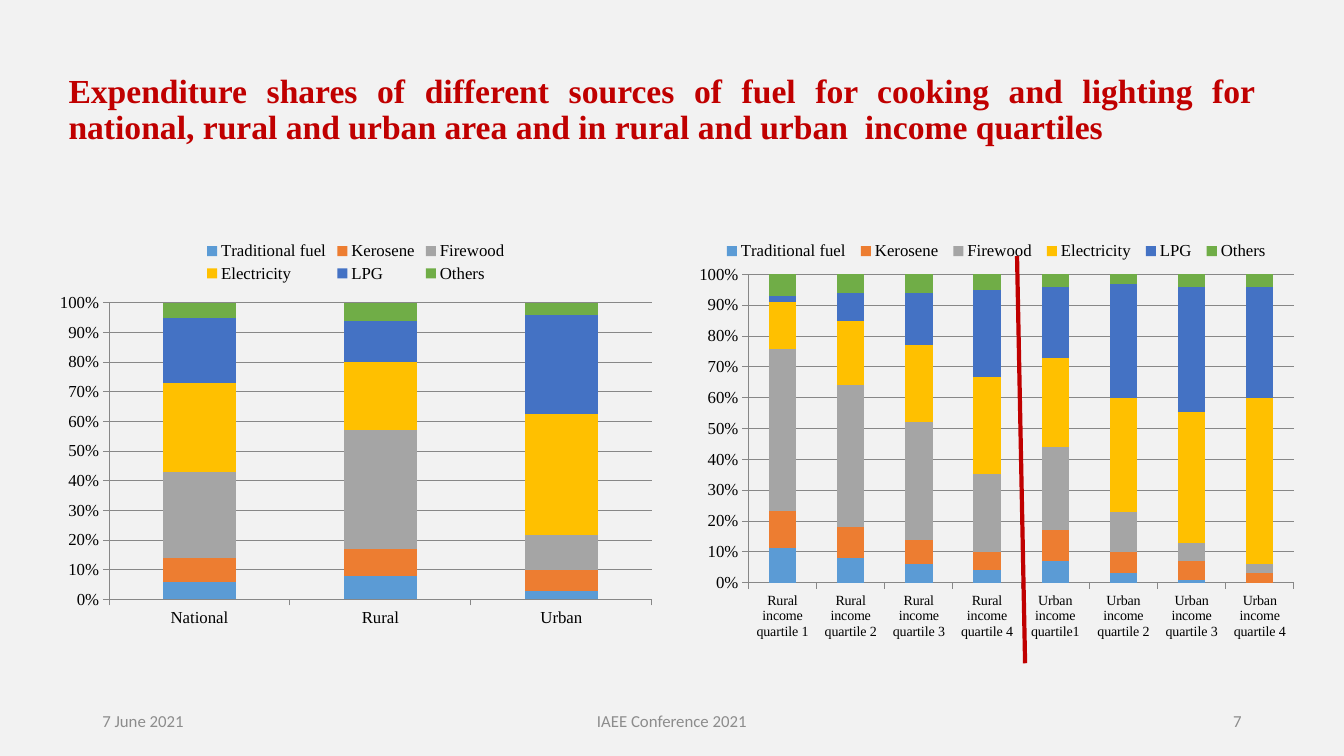
import pptx
import pptx.chart.data
import pptx.dml.color
import pptx.enum.chart
import pptx.enum.shapes
import pptx.enum.text
import pptx.oxml
import pptx.oxml.ns
import pptx.util
from lxml import etree

Pt = pptx.util.Pt
RGB = pptx.dml.color.RGBColor.from_string
Align = pptx.enum.text.PP_ALIGN
Middle = pptx.enum.text.MSO_ANCHOR.MIDDLE
qn = pptx.oxml.ns.qn

COLORS = {
    "background": "F2F2F2", "accent": "C00000", "footer": "8C8C8C",
    "text": "000000", "axis": "878787",
    "Traditional fuel": "5B9BD5", "Kerosene": "ED7D31", "Firewood": "A5A5A5",
    "Electricity": "FFC000", "LPG": "4472C4", "Others": "70AD47",
}
SERIF = "Times New Roman"


def set_font(font, color, **values):
    for name, value in values.items():
        setattr(font, name, value)
    font.color.rgb = RGB(COLORS[color])


def add_layout(parent, index, fractions, inner=False):
    for old in parent.findall(qn("c:layout")):
        parent.remove(old)
    layout = etree.Element(qn("c:layout"))
    manual = etree.SubElement(layout, qn("c:manualLayout"))
    entries = [("layoutTarget", "inner")] if inner else []
    entries += [("xMode", "edge"), ("yMode", "edge")]
    entries += zip("xywh", fractions)
    for tag, value in entries:
        etree.SubElement(manual, qn("c:" + tag)).set("val", str(value))
    parent.insert(index, layout)


deck = pptx.Presentation()
deck.slide_width, deck.slide_height = Pt(960), Pt(540)
page = deck.slides.add_slide(deck.slide_layouts[5])
page.background.fill.solid()
page.background.fill.fore_color.rgb = RGB(COLORS["background"])

title = page.shapes.title
title.left, title.top, title.width, title.height = Pt(41.76), Pt(26.64), Pt(861.84), Pt(104.4)
title.text_frame.text = (
    "Expenditure shares of different sources of fuel for cooking and lighting for "
    "national, rural and urban area and in rural and urban  income quartiles"
)
title.text_frame.vertical_anchor = Middle
title.text_frame.word_wrap = True
title.text_frame.auto_size = pptx.enum.text.MSO_AUTO_SIZE.NONE
para = title.text_frame.paragraphs[0]
para.alignment, para.line_spacing = Align.JUSTIFY, 0.9
set_font(para.runs[0].font, "accent", name=SERIF, size=Pt(24), bold=True)

charts = [
    {
        "place": (33.84, 164.16, 440.64, 290.16),
        "categories": ["National", "Rural", "Urban"],
        "category_size": 12,
        "plot": (0.1, 0.18, 0.88, 0.73),
        "legend": (0.25, 0.02, 0.5, 0.12),
        "shares": {
            "Traditional fuel": (6, 8, 3),
            "Kerosene": (8, 9, 7),
            "Firewood": (29, 40, 12),
            "Electricity": (30, 23, 41),
            "LPG": (22, 14, 34),
            "Others": (5, 6, 4),
        },
    },
    {
        "place": (490.32, 159.84, 442.8, 301.68),
        "categories": [
            "Rural income quartile 1", "Rural income quartile 2",
            "Rural income quartile 3", "Rural income quartile 4",
            "Urban income quartile1", "Urban income quartile 2",
            "Urban income quartile 3", "Urban income quartile 4",
        ],
        "category_size": 10,
        "plot": (0.1, 0.12, 0.88, 0.73),
        "legend": (0.05, 0.03, 0.9, 0.07),
        "shares": {
            "Traditional fuel": (11, 8, 6, 4, 7, 3, 1, 0),
            "Kerosene": (12, 10, 8, 6, 10, 7, 6, 3),
            "Firewood": (52, 46, 38, 25, 27, 13, 6, 3),
            "Electricity": (15, 21, 25, 31, 29, 37, 43, 54),
            "LPG": (2, 9, 17, 28, 23, 37, 41, 36),
            "Others": (7, 6, 6, 5, 4, 3, 4, 4),
        },
    },
]
for details in charts:
    data = pptx.chart.data.CategoryChartData()
    data.categories = details["categories"]
    for fuel, shares in details["shares"].items():
        data.add_series(fuel, shares)
    chart = page.shapes.add_chart(
        pptx.enum.chart.XL_CHART_TYPE.COLUMN_STACKED_100,
        *map(Pt, details["place"]), data,
    ).chart
    chart.has_title = False
    set_font(chart.font, "text", name=SERIF, size=Pt(12))

    plot = chart.plots[0]
    plot.gap_width, plot.overlap, plot.vary_by_categories = 150, 100, False
    for series in plot.series:
        series.format.fill.solid()
        series.format.fill.fore_color.rgb = RGB(COLORS[series.name])

    chart.has_legend = True
    chart.legend.position = pptx.enum.chart.XL_LEGEND_POSITION.TOP
    chart.legend.include_in_layout = False
    set_font(chart.legend.font, "text", name=SERIF, size=Pt(12))

    values = chart.value_axis
    values.minimum_scale, values.maximum_scale, values.major_unit = 0, 1, 0.1
    values.has_major_gridlines = True
    values.tick_labels.number_format = "0%"
    values.tick_labels.number_format_is_linked = False
    for axis, size in ((chart.category_axis, details["category_size"]), (values, 12)):
        axis.major_tick_mark = pptx.enum.chart.XL_TICK_MARK.OUTSIDE
        axis.minor_tick_mark = pptx.enum.chart.XL_TICK_MARK.NONE
        set_font(axis.tick_labels.font, "text", name=SERIF, size=Pt(size))
    for part in (chart.category_axis, values, values.major_gridlines):
        part.format.line.width = Pt(0.75)
        part.format.line.color.rgb = RGB(COLORS["axis"])

    add_layout(plot._element.getparent(), 0, details["plot"], inner=True)
    add_layout(chart.legend._element, 1, details["legend"])

divider = page.shapes.add_connector(
    pptx.enum.shapes.MSO_CONNECTOR.STRAIGHT, Pt(726.48), Pt(182.88), Pt(732.24), Pt(473.76)
)
divider.line.width = Pt(3)
divider.line.color.rgb = RGB(COLORS["accent"])
etree.SubElement(divider._element.spPr, qn("a:effectLst"))

footers = [
    ("7 June 2021", 66, 216, Align.LEFT),
    ("IAEE Conference 2021", 318, 324, Align.CENTER),
    ("7", 678, 216, Align.RIGHT),
]
for text, left, width, alignment in footers:
    box = page.shapes.add_textbox(Pt(left), Pt(500.5), Pt(width), Pt(28.75))
    box.text_frame.text = text
    box.text_frame.word_wrap = True
    box.text_frame.vertical_anchor = Middle
    para = box.text_frame.paragraphs[0]
    para.alignment = alignment
    set_font(para.runs[0].font, "footer", name="Calibri", size=Pt(12))

deck.save("out.pptx")
